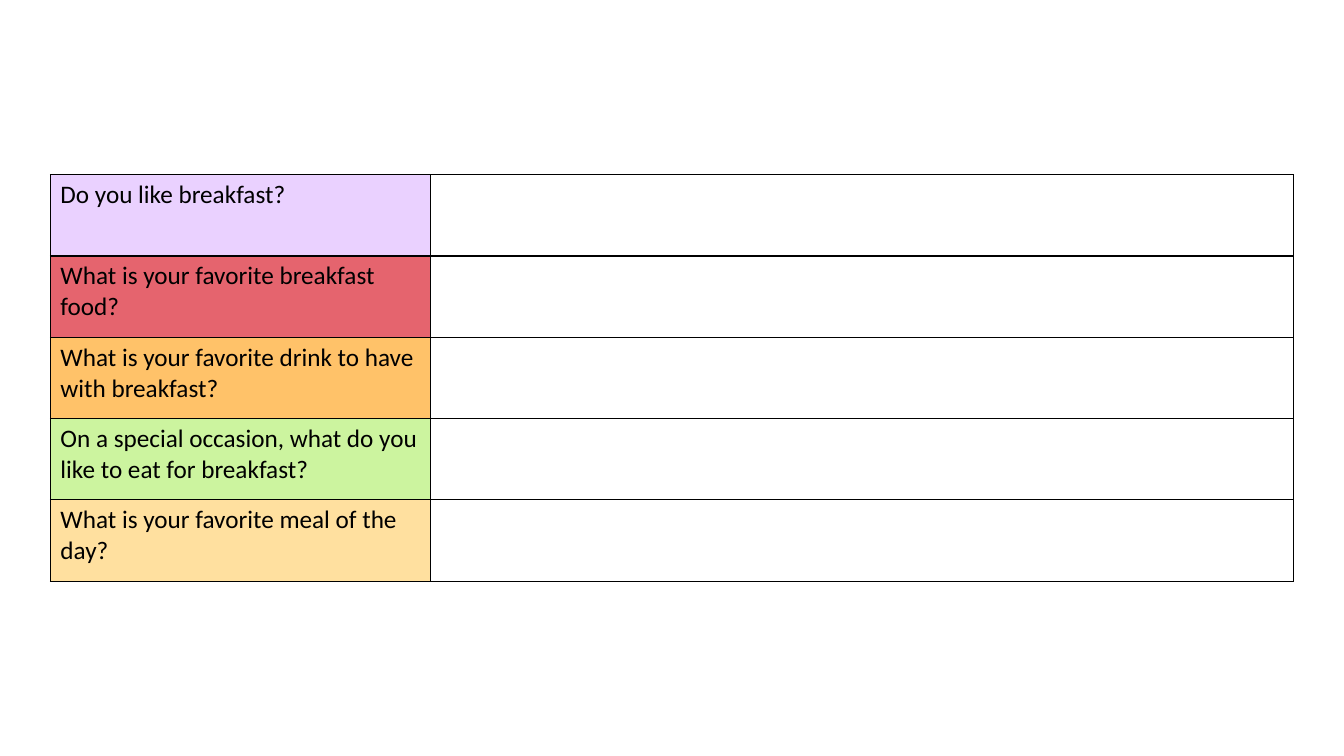
from lxml import etree
from pptx import Presentation
from pptx.dml.color import RGBColor
from pptx.oxml import ns
from pptx.util import Cm, Pt

BLACK = "000000"
QUESTIONS = [
    ("Do you like breakfast?", "EAD1FF"),
    ("What is your favorite breakfast food?", "E5646E"),
    ("What is your favorite drink to have with breakfast?", "FFC269"),
    ("On a special occasion, what do you like to eat for breakfast?", "CCF49F"),
    ("What is your favorite meal of the day?", "FFE09F"),
]
COLUMN_WIDTHS = (Cm(9.57), Cm(21.76))
ROW_HEIGHT = Cm(2.05)


def color(hex_value):
    return RGBColor.from_string(hex_value)


def write(frame, wording, size=18, font="Calibri", ink=BLACK):
    paragraph = frame.paragraphs[0]
    paragraph.font.size = Pt(size)
    if wording:
        run = paragraph.add_run()
        run.text = wording
        run.font.name = font
        run.font.size = Pt(size)
        run.font.color.rgb = color(ink)


def fill_cell(cell, hex_value=None):
    if hex_value:
        cell.fill.solid()
        cell.fill.fore_color.rgb = color(hex_value)
    else:
        cell.fill.background()


def outline_cell(cell, hex_value=BLACK, width=1):
    properties = cell._tc.get_or_add_tcPr()
    # Borders must come before the fill
    for position, side in enumerate(("lnL", "lnR", "lnT", "lnB")):
        border = etree.Element(ns.qn(f"a:{side}"), w=str(Pt(width)))
        ink = etree.SubElement(border, ns.qn("a:solidFill"))
        etree.SubElement(ink, ns.qn("a:srgbClr"), val=hex_value)
        properties.insert(position, border)


def add_survey(slide, left, top):
    survey = slide.shapes.add_table(
        len(QUESTIONS), len(COLUMN_WIDTHS), left, top,
        sum(COLUMN_WIDTHS), ROW_HEIGHT * len(QUESTIONS)).table
    survey.first_row = survey.horz_banding = False
    for column, width in zip(survey.columns, COLUMN_WIDTHS):
        column.width = width

    # Coloured question on the left, empty answer on the right
    for row, (question, tint) in zip(survey.rows, QUESTIONS):
        row.height = ROW_HEIGHT
        for cell, wording, fill in zip(row.cells, (question, ""), (tint, None)):
            write(cell.text_frame, wording)
            fill_cell(cell, fill)
            outline_cell(cell)


def main():
    deck = Presentation()
    deck.slide_width, deck.slide_height = Cm(33.87), Cm(19.05)
    slide = deck.slides.add_slide(deck.slide_layouts[6])
    add_survey(slide, Cm(1.27), Cm(4.4))
    deck.save("out.pptx")


if __name__ == "__main__":
    main()
